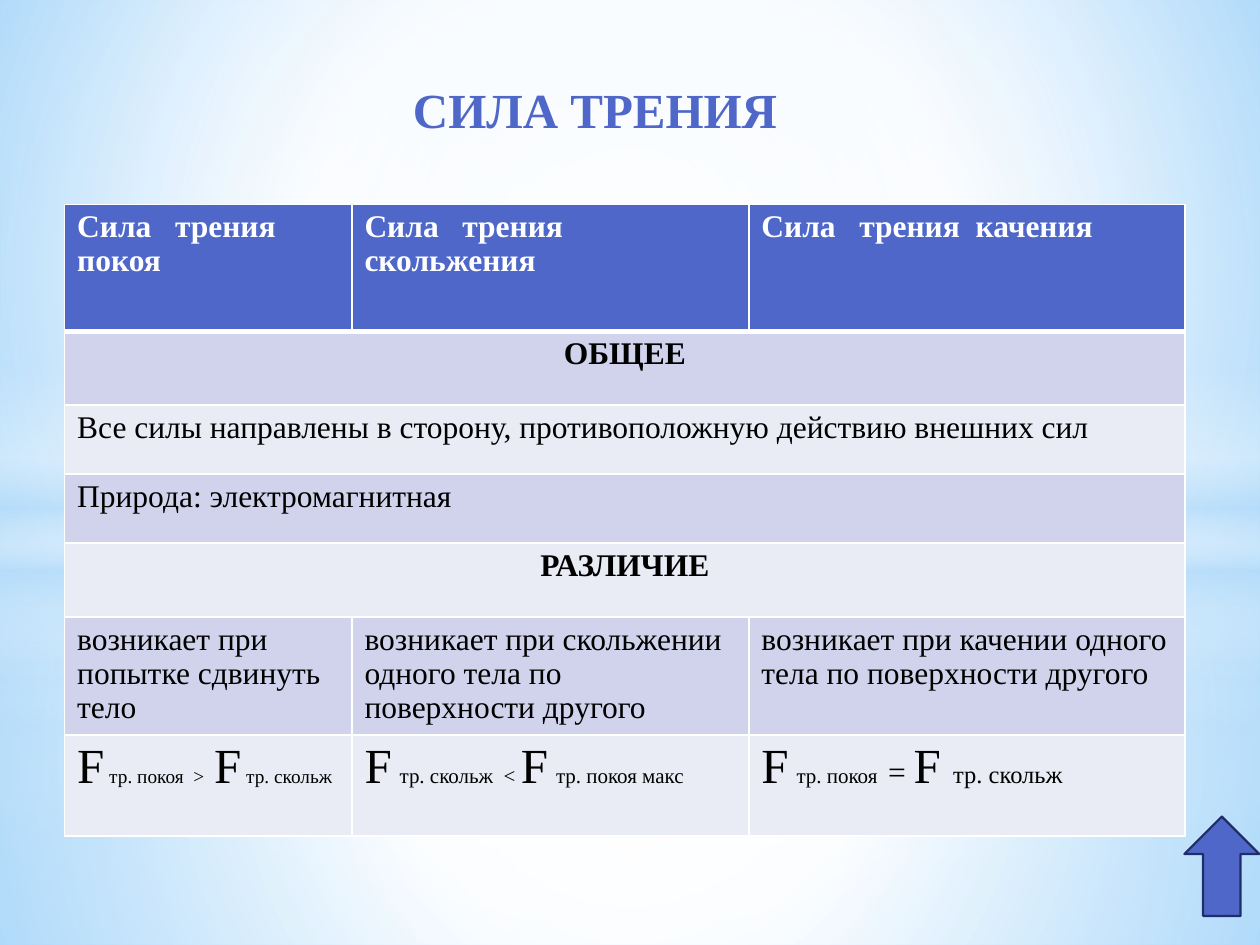
import pptx
import pptx.dml.color
import pptx.enum.shapes
import pptx.enum.text
import pptx.oxml
import pptx.oxml.ns
import pptx.util

Pt = pptx.util.Pt
SHAPE = pptx.enum.shapes.MSO_SHAPE
ALIGN = pptx.enum.text.PP_ALIGN
NAMESPACE = pptx.oxml.ns.nsdecls("a")
COLORS = {
    "accent": "4E67C8", "outline": "1F2E69", "white": "FFFFFF", "black": "000000",
    "band": "D0D3EB", "light": "E9EBF5", "haze": "B4DCFA",
    "sky": "9ED5FF", "deep_sky": "5BB9FF",
}


class SlideBuilder:
    font = "Times New Roman"

    def __init__(self, slide):
        self.slide = slide

    def color(self, name):
        return pptx.dml.color.RGBColor.from_string(COLORS[name])

    def gradient(self, stops, focus=None):
        stop_xml = "".join(
            f'<a:gs pos="{position * 1000}"><a:srgbClr val="{COLORS[name]}">'
            f'<a:alpha val="{opacity * 1000}"/></a:srgbClr></a:gs>'
            for position, name, opacity in stops)
        direction = '<a:lin ang="5400000" scaled="0"/>'
        if focus:
            left, top, right, bottom = (value * 1000 for value in focus)
            direction = (f'<a:path path="circle"><a:fillToRect l="{left}" t="{top}" '
                         f'r="{right}" b="{bottom}"/></a:path>')
        return pptx.oxml.parse_xml(
            f'<a:gradFill {NAMESPACE} rotWithShape="1"><a:gsLst>{stop_xml}</a:gsLst>'
            f'{direction}</a:gradFill>')

    def background(self, stops, focus):
        fill = self.slide.background.fill
        fill.solid()
        fill.fore_color.rgb = self.color("white")
        solid = self.slide._element.cSld.find(".//" + pptx.oxml.ns.qn("a:solidFill"))
        solid.getparent().replace(solid, self.gradient(stops, focus))

    def shape(self, kind, left, top, width, height, fill="white", line=None):
        shape = self.slide.shapes.add_shape(kind, Pt(left), Pt(top), Pt(width), Pt(height))
        shape.shadow.inherit = False
        shape.fill.solid()
        shape.fill.fore_color.rgb = self.color(fill)
        if line:
            shape.line.color.rgb = self.color(line)
            shape.line.width = Pt(1.25)
        else:
            shape.line.fill.background()
        return shape

    def glow(self, kind, top, height, stops, focus=(50, 50, 50, 50)):
        shape = self.shape(kind, 0, top, 720, height)
        solid = shape._element.spPr.find(pptx.oxml.ns.qn("a:solidFill"))
        solid.getparent().replace(solid, self.gradient(stops, focus))

    def add_text(self, paragraph, runs, color="black", bold=False, align=ALIGN.LEFT):
        paragraph.alignment = align
        for text, size in runs:
            run = paragraph.add_run()
            run.text = text
            run.font.name = self.font
            run.font.size = Pt(size)
            run.font.bold = bold
            run.font.color.rgb = self.color(color)

    def title(self, text, left, top, width, height):
        title = self.slide.shapes.title
        title.left, title.top, title.width, title.height = map(Pt, (left, top, width, height))
        frame = title.text_frame
        frame.auto_size = pptx.enum.text.MSO_AUTO_SIZE.NONE
        frame.vertical_anchor = pptx.enum.text.MSO_ANCHOR.BOTTOM
        self.add_text(frame.paragraphs[0], [(text, 28)], "accent", True, ALIGN.CENTER)
        self.slide.shapes._spTree.append(title._element)

    def borders(self, cell, top, bottom):
        properties = cell._tc.get_or_add_tcPr()
        for index, (side, width) in enumerate(
                [("L", 1), ("R", 1), ("T", top), ("B", bottom)]):
            properties.insert(index, pptx.oxml.parse_xml(
                f'<a:ln{side} {NAMESPACE} w="{Pt(width)}"><a:solidFill>'
                f'<a:srgbClr val="{COLORS["white"]}"/></a:solidFill></a:ln{side}>'))

    def table(self, left, top, widths, heights, rows):
        table = self.slide.shapes.add_table(
            len(rows), len(widths), Pt(left), Pt(top),
            Pt(sum(widths)), Pt(sum(heights))).table
        for column, width in zip(table.columns, widths):
            column.width = Pt(width)
        for row_index, (cells, height) in enumerate(zip(rows, heights)):
            table.rows[row_index].height = Pt(height)
            header = row_index == 0
            merged = len(cells) == 1
            fill = "accent" if header else "band" if row_index % 2 else "light"
            if merged:
                table.cell(row_index, 0).merge(table.cell(row_index, len(widths) - 1))
            for column_index in range(len(widths)):
                cell = table.cell(row_index, column_index)
                cell.fill.solid()
                cell.fill.fore_color.rgb = self.color(fill)
                self.borders(cell, 3 if row_index == 1 else 1, 3 if header else 1)
            for column_index, content in enumerate(cells):
                runs = [(content, 18)] if isinstance(content, str) else content
                heading = merged and content.isupper()
                paragraph = table.cell(row_index, column_index).text_frame.paragraphs[0]
                paragraph.line_spacing = 0.97
                self.add_text(paragraph, runs, "white" if header else "black",
                              header or heading, ALIGN.CENTER if heading else ALIGN.LEFT)


def main():
    presentation = pptx.Presentation()
    presentation.slide_width, presentation.slide_height = Pt(720), Pt(540)
    builder = SlideBuilder(presentation.slides.add_slide(presentation.slide_layouts[5]))

    builder.background([(0, "sky", 100), (60, "white", 100), (100, "deep_sky", 100)],
                       (20, 10, 20, 60))
    band_stops = [(0, "white", 0), (29, "white", 30), (45, "haze", 40),
                  (55, "white", 26), (65, "haze", 60), (100, "white", 0)]
    for horizon, band_top, shift, fade in [(401.8, 296.6, 0, 56), (304.6, 208.8, 1, 54)]:
        builder.glow(SHAPE.RECTANGLE, horizon, 540 - horizon,
                     [(0, "white", 91 + shift), (37, "white", 76 + shift),
                      (100, "haze", 79 + shift)])
        builder.glow(SHAPE.RECTANGLE, 0, horizon,
                     [(0, "white", 89 + shift), (48, "white", 62 + shift),
                      (100, "haze", 79 + shift)])
        builder.glow(SHAPE.RECTANGLE, band_top, 180, band_stops, None)
        builder.glow(SHAPE.OVAL, 126, 401.8, [(0, "white", 100), (fade, "white", 0)])

    builder.title("СИЛА ТРЕНИЯ", 105, 43.2, 470, 39.6)
    builder.table(36.9, 116.8, [164.2, 226.8, 249.4],
                  [72.5, 42.2, 39.5, 39.5, 42.2, 67.4, 57.8], [
        ["Сила   трения покоя", "Сила   трения скольжения", "Сила   трения  качения"],
        ["ОБЩЕЕ"],
        ["Все силы направлены в сторону, противоположную действию внешних сил"],
        ["Природа: электромагнитная"],
        ["РАЗЛИЧИЕ"],
        ["возникает при  попытке сдвинуть тело",
         "возникает при скольжении одного тела по поверхности другого",
         "возникает при качении одного тела по поверхности другого"],
        [[("F", 28), (" тр. покоя  >  ", 11), ("F", 28), (" тр. скольж", 11)],
         [("F", 28), (" ", 18), ("тр. скольж  < ", 12),
          ("F", 28), (" ", 18), ("тр. покоя макс", 12)],
         [("F", 28), (" ", 18), ("тр. покоя  ", 12), ("= ", 18),
          ("F ", 28), ("тр. скольж", 14)]],
    ])
    builder.shape(SHAPE.UP_ARROW, 676.8, 466.6, 42.8, 56.8, "accent", "outline")
    presentation.save("out.pptx")


if __name__ == "__main__":
    main()
